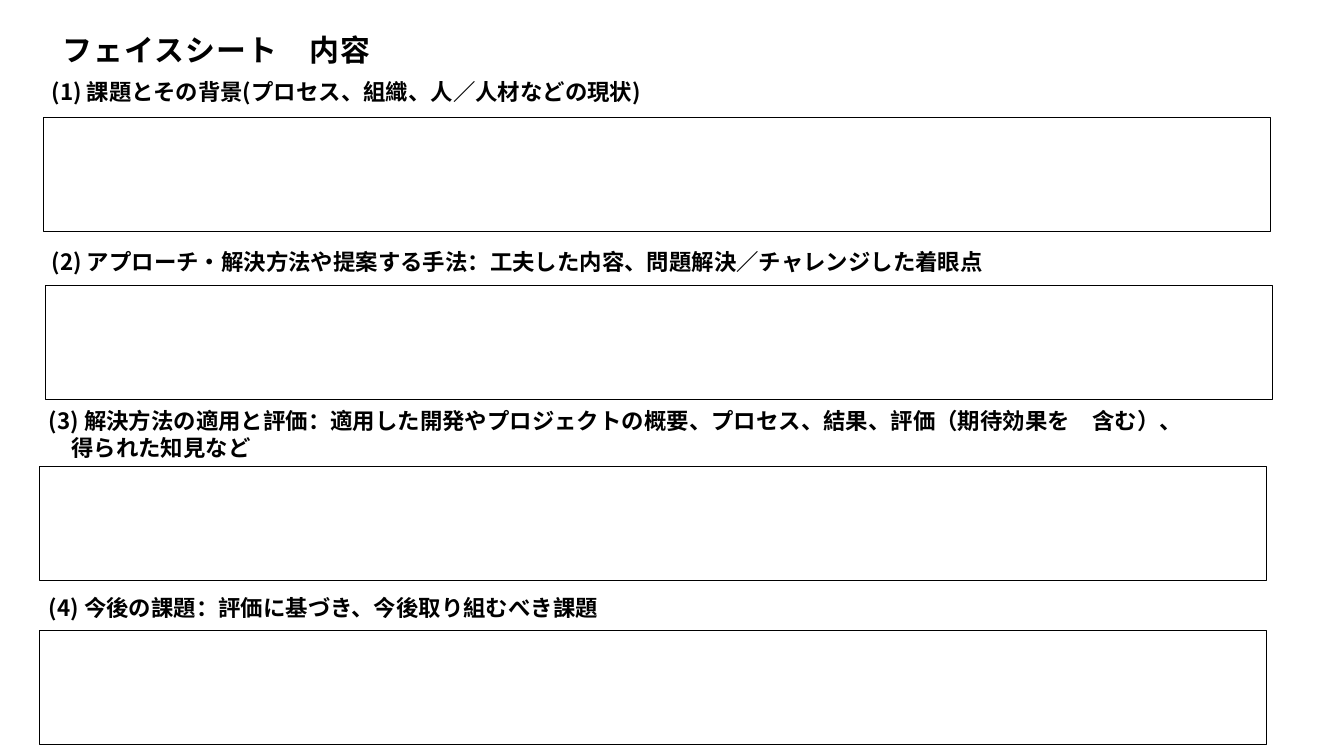
import pptx
import pptx.dml.color
import pptx.enum.shapes
import pptx.enum.text
import pptx.oxml.ns
import pptx.util
from lxml import etree

EMU_PER_PX = 9144  # 100 px to the inch
PAGE_WIDTH, PAGE_HEIGHT = 2000, 1125
FIELD_WIDTH, FIELD_HEIGHT = 1826, 169
FONT = "Noto Sans CJK JP"
BLACK = pptx.dml.color.RGBColor(0, 0, 0)
WHITE = pptx.dml.color.RGBColor(255, 255, 255)

TITLE = "フェイスシート　内容"

# Heading: (left, top, width, height, wraps, lines); answer field: (left, top)
SECTIONS = [
    ((67, 111, 940, 50, False,
      ["(1) 課題とその背景(プロセス、組織、人／人材などの現状)"]), (65, 175)),
    ((67, 364, 1445, 50, False,
      ["(2) アプローチ・解決方法や提案する手法：工夫した内容、問題解決／チャレンジした着眼点"]),
     (67, 425)),
    ((63, 601, 1801, 91, True,
      ["(3) 解決方法の適用と評価：適用した開発やプロジェクトの概要、プロセス、結果、評価（期待効果を　含む）、",
       "　得られた知見など"]), (58, 694)),
    ((63, 879, 1801, 50, True,
      ["(4) 今後の課題：評価に基づき、今後取り組むべき課題"]), (58, 938)),
]


def px(*lengths):
    return [pptx.util.Emu(length * EMU_PER_PX) for length in lengths]


def set_all(target, values):
    for name, value in values.items():
        setattr(target, name, value)


def add_span(para, text, size, spacing=None):
    """Add bold black text, naming the font for East Asian letters too."""
    span = para.add_run()
    span.text = text
    set_all(span.font, {"name": FONT, "size": pptx.util.Pt(size), "bold": True})
    span.font.color.rgb = BLACK
    properties = span._r.get_or_add_rPr()
    east_asian = etree.SubElement(properties, pptx.oxml.ns.qn("a:ea"))
    east_asian.set("typeface", FONT)
    if spacing:
        properties.set("spc", str(spacing))


def add_text(page, left, top, width, height, wraps, lines, size=24, spacing=None):
    box = page.shapes.add_textbox(*px(left, top, width, height))
    frame = box.text_frame
    set_all(frame, {
        "word_wrap": wraps,
        "auto_size": pptx.enum.text.MSO_AUTO_SIZE.SHAPE_TO_FIT_TEXT,
    })
    for index, line in enumerate(lines):
        para = frame.add_paragraph() if index else frame.paragraphs[0]
        add_span(para, line, size, spacing)
    return frame


def add_title(page):
    frame = add_text(page, 92, 46, 1325, 55, True, [TITLE], size=32, spacing=120)
    left, top, right, bottom = px(1, 1, 0, 0)
    set_all(frame, {"margin_left": left, "margin_top": top,
                    "margin_right": right, "margin_bottom": bottom})
    frame.paragraphs[0].space_before = pptx.util.Pt(1)


def add_field(page, left, top):
    """Add an empty outlined box for the answer."""
    field = page.shapes.add_shape(pptx.enum.shapes.MSO_SHAPE.RECTANGLE,
                                  *px(left, top, FIELD_WIDTH, FIELD_HEIGHT))
    field.shadow.inherit = False
    field.fill.background()
    field.line.color.rgb = BLACK
    field.line.width = pptx.util.Pt(0)


def main():
    deck = pptx.Presentation()
    deck.slide_width, deck.slide_height = px(PAGE_WIDTH, PAGE_HEIGHT)
    page = deck.slides.add_slide(deck.slide_layouts[6])
    page.background.fill.solid()
    page.background.fill.fore_color.rgb = WHITE

    add_title(page)
    for heading, _ in SECTIONS:
        add_text(page, *heading)
    for _, corner in SECTIONS:
        add_field(page, *corner)
    deck.save("out.pptx")


if __name__ == "__main__":
    main()
